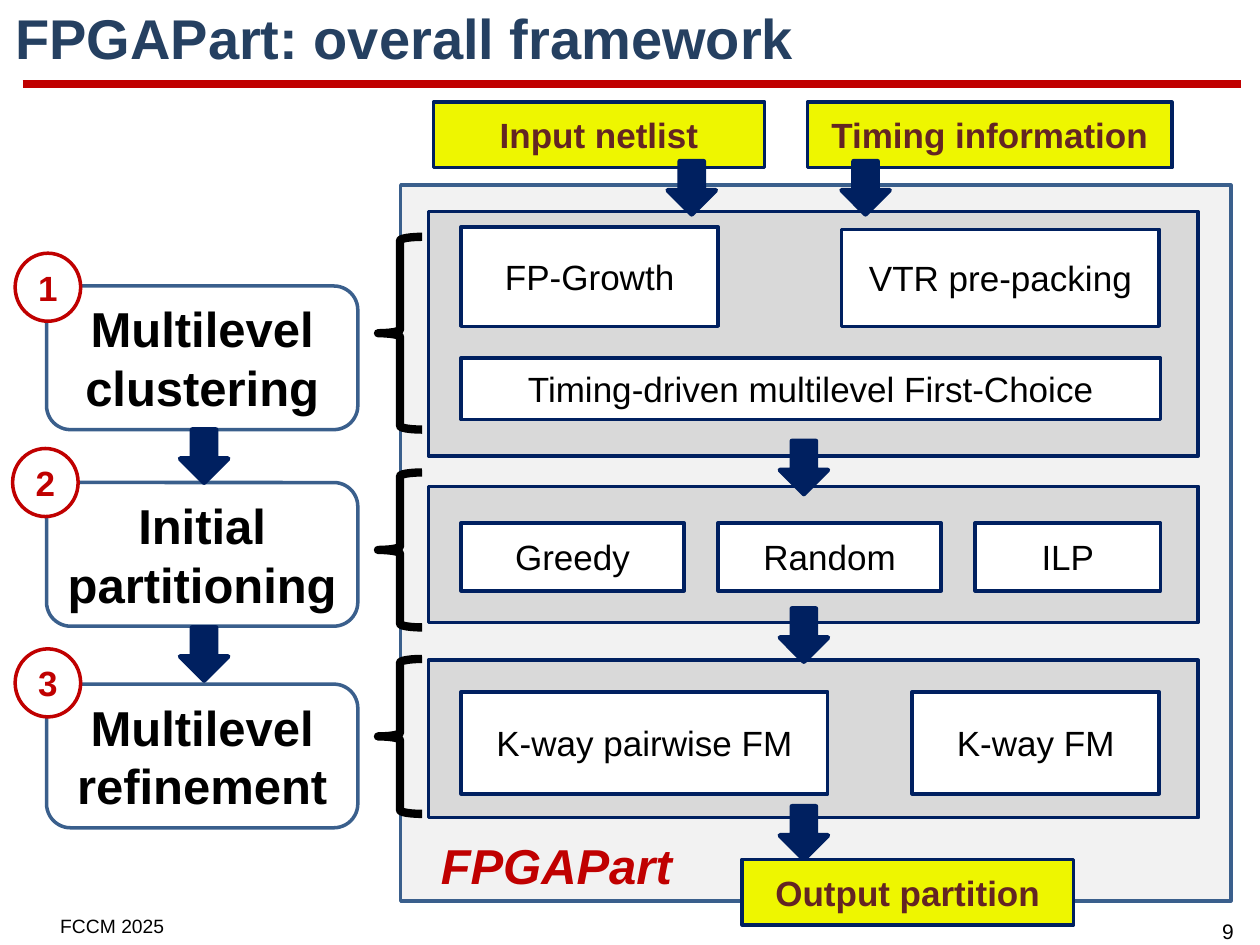
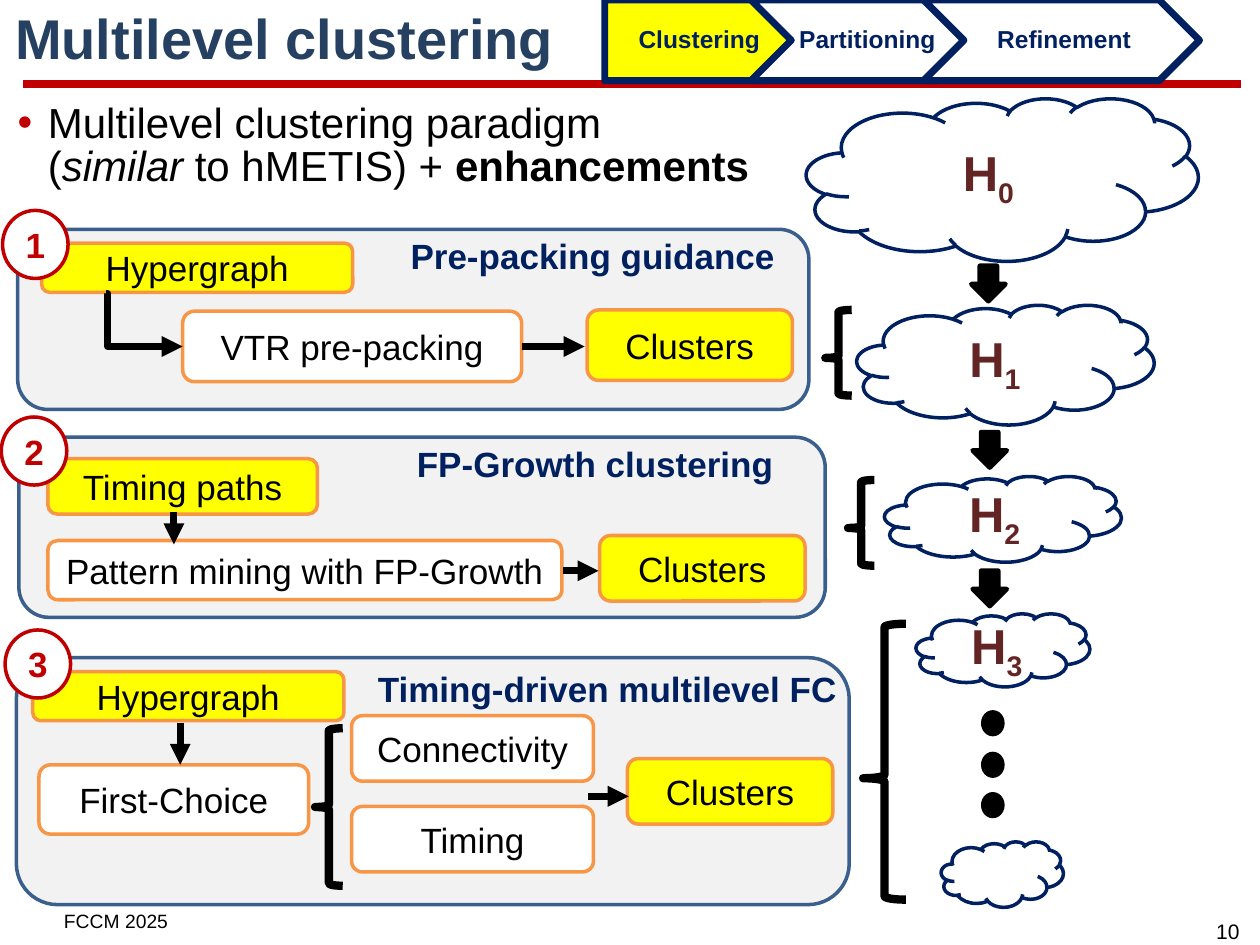
from dataclasses import dataclass
from typing import NamedTuple

import lxml.etree
import pptx
import pptx.dml.color
import pptx.enum.shapes
import pptx.enum.text
import pptx.oxml.ns
import pptx.util

qn = pptx.oxml.ns.qn
Preset = pptx.enum.shapes.MSO_SHAPE
Link = pptx.enum.shapes.MSO_CONNECTOR
Align = pptx.enum.text.PP_ALIGN
Anchor = pptx.enum.text.MSO_ANCHOR

EMU_PER_PX = 9144  # 100 px to the inch
FONT = "Arial"
COLOURS = {
    "white": "FFFFFF", "black": "000000", "red": "C00000", "title": "254061",
    "navy": "002060", "steel": "3A5F8C", "pale": "F2F2F2", "grey": "D9D9D9",
    "lime": "EEF600", "yellow": "FFFF00", "orange": "F79646", "brown": "632523",
}


class Item(NamedTuple):
    left: int
    top: int
    width: int
    height: int
    text: str = ""
    subscript: str = ""


class Arrow(NamedTuple):
    x1: int
    y1: int
    x2: int
    y2: int


@dataclass(frozen=True)
class Type:
    size: int
    colour: str = "black"
    bold: bool = False
    italic: bool = False


@dataclass(frozen=True)
class Look:
    preset: Preset
    fill: str | None
    line: str
    weight: float = 2
    type: Type = Type(20)
    adjustments: tuple[float, ...] = ()


TITLE = Type(32, "title", bold=True)
BODY = Type(24)
FOOTER = Type(11)
PAGE_NUMBER = Type(12)
BRAND = Type(28, "red", bold=True, italic=True)
PANEL_HEADING = Type(20, "navy", bold=True)
STEP_TYPE = Type(14, "navy", bold=True)

FRAME = Look(Preset.RECTANGLE, "pale", "steel")
STAGE = Look(Preset.RECTANGLE, "grey", "navy")
METHOD = Look(Preset.RECTANGLE, "white", "navy")
DATA = Look(Preset.RECTANGLE, "lime", "navy", type=Type(20, "brown", bold=True))
PHASE = Look(Preset.ROUNDED_RECTANGLE, "white", "steel", type=Type(28, bold=True))
FLOW = Look(Preset.DOWN_ARROW, "navy", "navy", 2.75)
BADGE = Look(Preset.OVAL, "white", "red", type=Type(20, "red", bold=True))
BRACE = Look(Preset.LEFT_BRACE, None, "black", 4.75)
LOW_BRACE = Look(Preset.LEFT_BRACE, None, "black", 4.75, adjustments=(0.08, 0.56))
PANEL = Look(Preset.ROUNDED_RECTANGLE, "pale", "steel")
ACTION = Look(Preset.ROUNDED_RECTANGLE, "white", "orange")
RESULT = Look(Preset.ROUNDED_RECTANGLE, "yellow", "orange")
GRAPH = Look(Preset.CLOUD, "white", "navy", type=Type(28, "brown", bold=True))
COARSEN = Look(Preset.DOWN_ARROW, "black", "black", 2.75)
DOT = Look(Preset.OVAL, "black", "black")
ACTIVE_STEP = Look(Preset.PENTAGON, "yellow", "navy", 4)
NEXT_STEP = Look(Preset.CHEVRON, "white", "navy", 4)


def px(length: int) -> pptx.util.Emu:
    return pptx.util.Emu(length * EMU_PER_PX)


def rgb(name: str) -> pptx.dml.color.RGBColor:
    return pptx.dml.color.RGBColor.from_string(COLOURS[name])


def add_span(para, text: str, style: Type, bold: bool = False, italic: bool = False):
    span = para.add_run()
    span.text = text
    font = span.font
    font.name, font.size = FONT, pptx.util.Pt(style.size)
    font.bold, font.italic = style.bold or bold, style.italic or italic
    font.color.rgb = rgb(style.colour)
    return span


def place(box, item: Item) -> None:
    box.left, box.top, box.width, box.height = map(px, item[:4])


def draw(page, look: Look, *items: Item) -> None:
    """Draw every item as a preset shape of one look."""
    for item in items:
        shape = page.shapes.add_shape(look.preset, *map(px, item[:4]))
        shape.shadow.inherit = False
        for index, value in enumerate(look.adjustments):
            shape.adjustments[index] = value
        if look.fill:
            shape.fill.solid()
            shape.fill.fore_color.rgb = rgb(look.fill)
        else:
            shape.fill.background()
        shape.line.color.rgb = rgb(look.line)
        shape.line.width = pptx.util.Pt(look.weight)
        if item.text:
            para = shape.text_frame.paragraphs[0]
            para.alignment = Align.CENTER
            add_span(para, item.text, look.type)
            if item.subscript:
                span = add_span(para, item.subscript, look.type)
                span.font._element.set("baseline", "-25000")


def add_label(page, item: Item, style: Type, align: Align = Align.LEFT):
    box = page.shapes.add_textbox(*map(px, item[:4]))
    box.text_frame.word_wrap = True
    para = box.text_frame.paragraphs[0]
    para.alignment = align
    add_span(para, item.text, style)
    return box


def add_line(page, ends: Arrow, colour: str, weight: float,
             head: bool = True, kind: Link = Link.STRAIGHT):
    line = page.shapes.add_connector(kind, *map(px, ends))
    line.line.color.rgb = rgb(colour)
    line.line.width = pptx.util.Pt(weight)
    properties = line.element.spPr
    if head:
        lxml.etree.SubElement(properties.find(qn("a:ln")), qn("a:tailEnd"), type="triangle")
    lxml.etree.SubElement(properties, qn("a:effectLst"))
    return line


def add_page(deck, layout: int, title: str, number: int, footer: Item):
    """Start a slide with the shared title, rule, footer and page number."""
    page = deck.slides.add_slide(deck.slide_layouts[layout])
    box = page.shapes.title
    place(box, Item(2, 8, 993, 49))
    frame = box.text_frame
    frame.auto_size = pptx.enum.text.MSO_AUTO_SIZE.NONE
    frame.vertical_anchor = Anchor.MIDDLE
    para = frame.paragraphs[0]
    para.alignment, para.line_spacing = Align.LEFT, 0.9
    add_span(para, title, TITLE)
    add_line(page, Arrow(18, 67, 985, 67), "red", 4.5, head=False)
    add_label(page, footer, FOOTER)
    add_label(page, Item(950, 724, 49, 30, str(number)), PAGE_NUMBER, Align.CENTER)
    return page


def add_badges(page, *corners: tuple[int, int]) -> None:
    draw(page, BADGE, *(Item(left, top, 52, 54, str(number))
                        for number, (left, top) in enumerate(corners, 1)))


def build_framework(deck) -> None:
    page = add_page(deck, 5, "FPGAPart: overall framework", 9,
                    Item(38, 721, 187, 27, "FCCM 2025"))
    draw(page, FRAME, Item(318, 147, 659, 568))
    draw(page, STAGE, *(Item(340, top, 611, height)
                        for top, height in ((168, 194), (386, 108), (524, 125))))
    draw(page, METHOD,
         Item(366, 180, 204, 79, "FP-Growth"),
         Item(668, 182, 252, 77, "VTR pre-packing"),
         Item(366, 284, 555, 49, "Timing-driven multilevel First-Choice"),
         Item(366, 415, 177, 54, "Greedy"),
         Item(570, 415, 177, 54, "Random"),
         Item(774, 415, 147, 54, "ILP"),
         Item(366, 549, 291, 81, "K-way pairwise FM"),
         Item(724, 549, 196, 81, "K-way FM"))
    add_label(page, Item(340, 658, 220, 57, "FPGAPart"), BRAND)
    phases = ((227, "Multilevel clustering"), (383, "Initial partitioning"),
              (543, "Multilevel refinement"))
    draw(page, PHASE, *(Item(37, top, 247, 114, text) for top, text in phases))
    draw(page, DATA,
         Item(344, 81, 263, 52, "Input netlist"),
         Item(641, 81, 289, 52, "Timing information"))
    flows = ((143, 341), (143, 498), (619, 350), (619, 483), (619, 640),
             (530, 128), (668, 128))
    draw(page, FLOW, *(Item(left, top, 38, 42) for left, top in flows))
    draw(page, DATA, Item(589, 682, 263, 52, "Output partition"))
    add_badges(page, (12, 201), (10, 356), (12, 515))
    draw(page, BRACE, *(Item(300, top, 35, height)
                        for top, height in ((188, 153), (375, 123), (523, 123))))


def fill_paradigm(box) -> None:
    place(box, Item(2, 78, 983, 622))
    box.text_frame.auto_size = pptx.enum.text.MSO_AUTO_SIZE.NONE
    para = box.text_frame.paragraphs[0]
    para.line_spacing, para.space_before = 0.85, pptx.util.Pt(0)
    properties = para._p.get_or_add_pPr()
    properties.set("marL", str(px(26)))
    properties.set("indent", str(px(-24)))
    colour = lxml.etree.SubElement(properties, qn("a:buClr"))
    lxml.etree.SubElement(colour, qn("a:srgbClr"), val=COLOURS["red"])
    lxml.etree.SubElement(properties, qn("a:buChar"), char="•")
    add_span(para, "Multilevel clustering paradigm", BODY)
    para.add_line_break()
    add_span(para, "(", BODY)
    add_span(para, "similar", BODY, italic=True)
    add_span(para, " to hMETIS) + ", BODY)
    add_span(para, "enhancements", BODY, bold=True)


def add_steps(page) -> None:
    """Draw the progress bar with the current step highlighted."""
    draw(page, ACTIVE_STEP, Item(480, 0, 160, 64))
    draw(page, NEXT_STEP, Item(596, 0, 181, 64), Item(733, 0, 219, 64))
    for item, inset in ((Item(480, 0, 144, 64, "Clustering"), 8),
                        (Item(628, 0, 117, 64, "Partitioning"), 6),
                        (Item(765, 0, 155, 64, "Refinement"), 6)):
        frame = add_label(page, item, STEP_TYPE, Align.CENTER).text_frame
        frame.vertical_anchor = Anchor.MIDDLE
        frame.margin_left, frame.margin_right = px(inset), px(2)
        frame.margin_top = frame.margin_bottom = px(4)
        frame.paragraphs[0].line_spacing = 0.9


def build_clustering(deck) -> None:
    page = add_page(deck, 1, "Multilevel clustering", 10,
                    Item(41, 717, 187, 27, "FCCM 2025"))
    fill_paradigm(page.placeholders[1])
    add_steps(page)
    draw(page, PANEL, Item(13, 522, 661, 196), Item(15, 347, 640, 143),
         Item(14, 182, 628, 143))
    draw(page, ACTION,
         Item(145, 247, 269, 56, "VTR pre-packing"),
         Item(38, 429, 408, 47, "Pattern mining with FP-Growth"),
         Item(31, 607, 214, 55, "First-Choice"),
         Item(279, 568, 192, 52, "Connectivity"),
         Item(279, 640, 192, 52, "Timing"))
    draw(page, RESULT,
         Item(466, 246, 163, 56, "Clusters"),
         Item(476, 425, 163, 52, "Clusters"),
         Item(498, 602, 163, 52, "Clusters"),
         Item(33, 193, 247, 39, "Hypergraph"),
         Item(38, 364, 214, 44, "Timing paths"),
         Item(26, 533, 247, 39, "Hypergraph"))
    draw(page, BRACE, Item(250, 578, 22, 125))
    clouds = ((640, 78, 311, 129), (680, 242, 236, 95), (702, 378, 188, 68),
              (727, 487, 138, 58))
    draw(page, GRAPH, *(Item(*cloud, "H", str(level)) for level, cloud in enumerate(clouds)),
         Item(747, 668, 97, 52))
    draw(page, DOT, *(Item(780, top, 16, 18) for top in (565, 598, 630)))
    draw(page, LOW_BRACE, Item(685, 495, 34, 219), Item(673, 381, 21, 68),
         Item(655, 246, 21, 68))
    draw(page, COARSEN, *(Item(left, top, 27, 28)
                          for left, top in ((771, 211), (772, 343), (772, 453))))
    for heading in (Item(316, 181, 369, 44, "Pre-packing guidance"),
                    Item(321, 346, 369, 44, "FP-Growth clustering"),
                    Item(290, 525, 406, 44, "Timing-driven multilevel FC")):
        add_label(page, heading, PANEL_HEADING)
    add_badges(page, (2, 167), (1, 331), (4, 500))
    elbow = add_line(page, Arrow(84, 233, 145, 275), "black", 4, kind=Link.ELBOW)
    guides = elbow.element.spPr.find(qn("a:prstGeom")).get_or_add_avLst()
    lxml.etree.SubElement(guides, qn("a:gd"), name="adj1", fmla="val 2600")
    for arrow in (Arrow(414, 275, 464, 275), Arrow(447, 453, 475, 453),
                  Arrow(138, 406, 138, 432), Arrow(143, 574, 143, 607),
                  Arrow(467, 632, 499, 632)):
        add_line(page, arrow, "black", 4)


def main() -> None:
    deck = pptx.Presentation()
    deck.slide_width, deck.slide_height = px(1000), px(750)
    build_framework(deck)
    build_clustering(deck)
    deck.save("out.pptx")


if __name__ == "__main__":
    main()
